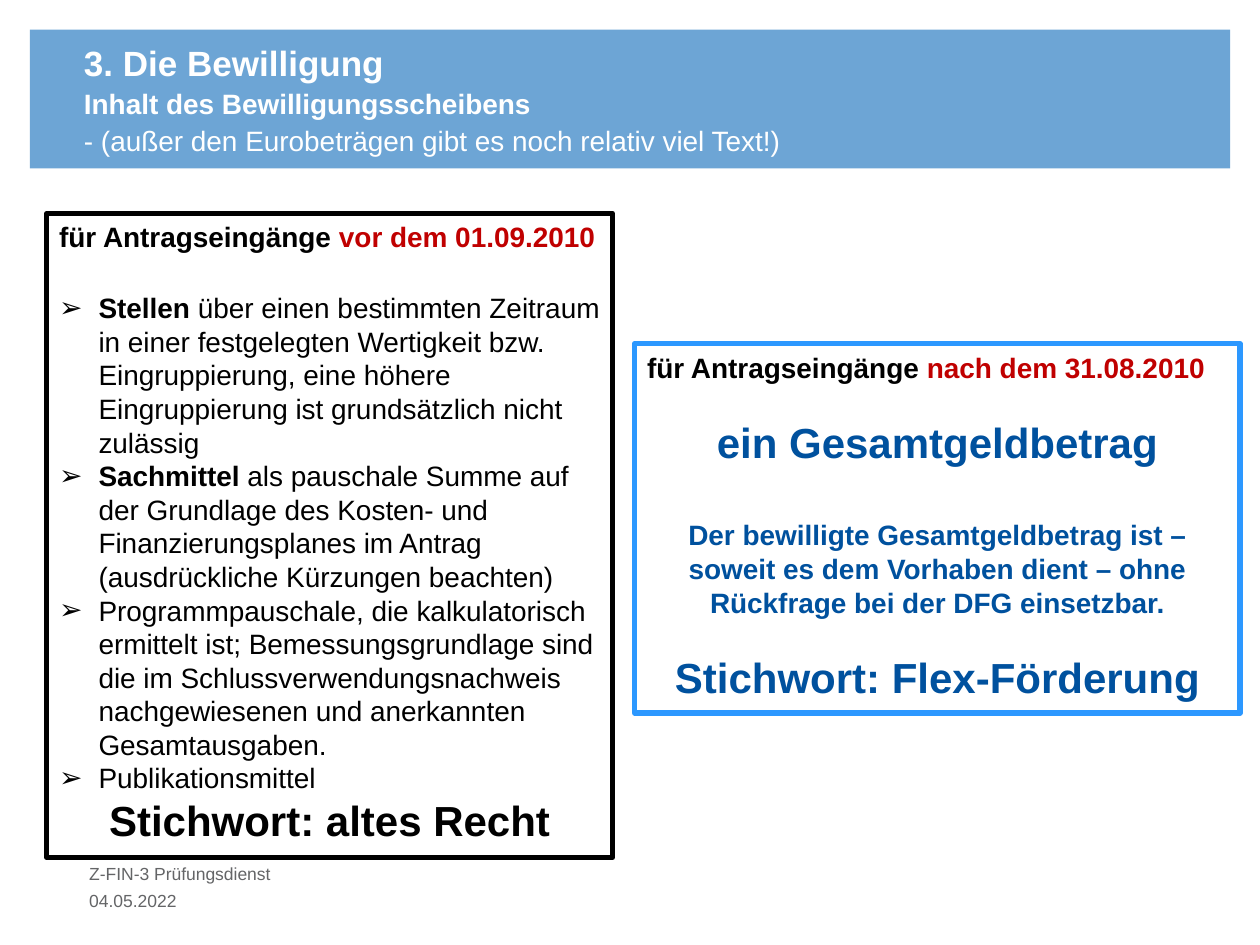
import pptx
import pptx.util
import pptx.dml.color
import pptx.enum.shapes
import pptx.enum.text
import lxml.etree

Pt = pptx.util.Pt
FONT = "Arial"
COLORS = {
    "band": "6DA5D5", "white": "FFFFFF", "black": "000000", "red": "C00000",
    "frame": "2C98FF", "blue": "00519E", "gray": "646567",
}


def rgb(name):
    return pptx.dml.color.RGBColor.from_string(COLORS[name])


def add_rect(slide, area, fill=None, line=None):
    kind = pptx.enum.shapes.MSO_SHAPE.RECTANGLE
    rect = slide.shapes.add_shape(kind, *map(Pt, area))
    rect.shadow.inherit = False
    if fill:
        rect.fill.solid()
        rect.fill.fore_color.rgb = rgb(fill)
    else:
        rect.fill.background()
    if line:
        rect.line.color.rgb = rgb(line)
        rect.line.width = Pt(3)
    else:
        rect.line.fill.background()
    return rect


def style(run, size, color, bold):
    run.font.name = FONT
    run.font.size = Pt(size)
    run.font.bold = bold
    run.font.color.rgb = rgb(color)


def add_label(slide, area, text, size, color, bold=False):
    frame = slide.shapes.add_textbox(*map(Pt, area)).text_frame
    frame.margin_left = frame.margin_right = 0
    frame.margin_top = frame.margin_bottom = 0
    frame.word_wrap = True
    frame.vertical_anchor = pptx.enum.text.MSO_ANCHOR.TOP
    frame.text = text
    style(frame.paragraphs[0].runs[0], size, color, bold)


def add_bullet(para):
    props = para._p.get_or_add_pPr()
    props.set("marL", str(Pt(22.5)))
    props.set("indent", str(Pt(-22.5)))
    space = "{http://schemas.openxmlformats.org/drawingml/2006/main}"
    lxml.etree.SubElement(props, space + "buFont", typeface=FONT)
    lxml.etree.SubElement(props, space + "buChar", char="➢")


def add_panel(slide, area, line, paras):
    """Each paragraph is (kind, space before, size, runs of (text, color, bold))."""
    frame = add_rect(slide, area, line=line).text_frame
    frame.word_wrap = True
    frame.vertical_anchor = pptx.enum.text.MSO_ANCHOR.TOP
    align = pptx.enum.text.PP_ALIGN
    for i, (kind, gap, size, parts) in enumerate(paras):
        para = frame.add_paragraph() if i else frame.paragraphs[0]
        if kind == "bullet":
            add_bullet(para)
        para.alignment = align.CENTER if kind == "center" else align.LEFT
        if gap:
            para.space_before = Pt(gap)
        for text, color, bold in parts:
            run = para.add_run()
            run.text = text
            style(run, size, color, bold)


def main():
    deck = pptx.Presentation()
    deck.slide_width, deck.slide_height = Pt(720), Pt(540)
    slide = deck.slides.add_slide(deck.slide_layouts[6])

    # Header band
    add_rect(slide, (17, 17, 686, 79.3), fill="band")
    add_label(slide, (48, 23.5, 624, 22), "3. Die Bewilligung", 20, "white", True)
    add_label(slide, (48, 49.5, 624, 21.5), "Inhalt des Bewilligungsscheibens",
              16, "white", True)
    add_label(slide, (48, 70.7, 624, 21.5),
              "- (außer den Eurobeträgen gibt es noch relativ viel Text!)",
              16, "white")

    # Old rules
    intro = ("für Antragseingänge ", "black", True)
    points = [
        ("Stellen", " über einen bestimmten Zeitraum in einer festgelegten "
         "Wertigkeit bzw. Eingruppierung, eine höhere Eingruppierung ist "
         "grundsätzlich nicht zulässig"),
        ("Sachmittel", " als pauschale Summe auf der Grundlage des Kosten- und "
         "Finanzierungsplanes im Antrag (ausdrückliche Kürzungen beachten)"),
        ("", "Programmpauschale, die kalkulatorisch ermittelt ist; "
         "Bemessungsgrundlage sind die im Schlussverwendungsnachweis "
         "nachgewiesenen und anerkannten Gesamtausgaben."),
        ("", "Publikationsmittel"),
    ]
    old = [("left", 0, 16, [intro, ("vor dem 01.09.2010", "red", True)])]
    for i, (lead, rest) in enumerate(points):
        parts = [(lead, "black", True)] if lead else []
        parts.append((rest, "black", False))
        old.append(("bullet", 0 if i else 21.5, 16, parts))
    old.append(("center", 0, 24, [("Stichwort: altes Recht", "black", True)]))
    add_panel(slide, (26.7, 122, 323.3, 368), "black", old)

    # New rules
    new = [("left", 0, 16, [intro, ("nach dem 31.08.2010", "red", True)])]
    for gap, size, text in [
        (19, 24, "ein Gesamtgeldbetrag"),
        (29, 16, "Der bewilligte Gesamtgeldbetrag ist – soweit es dem "
         "Vorhaben dient – ohne Rückfrage bei der DFG einsetzbar."),
        (19, 24, "Stichwort: Flex-Förderung"),
    ]:
        new.append(("center", gap, size, [(text, "blue", True)]))
    add_panel(slide, (362.7, 196.5, 346, 211), "frame", new)

    # Footer
    add_label(slide, (51, 493, 500, 16), "Z-FIN-3 Prüfungsdienst", 10, "gray")
    add_label(slide, (51, 508.5, 500, 19), "04.05.2022", 10, "gray")

    deck.save("out.pptx")


if __name__ == "__main__":
    main()
